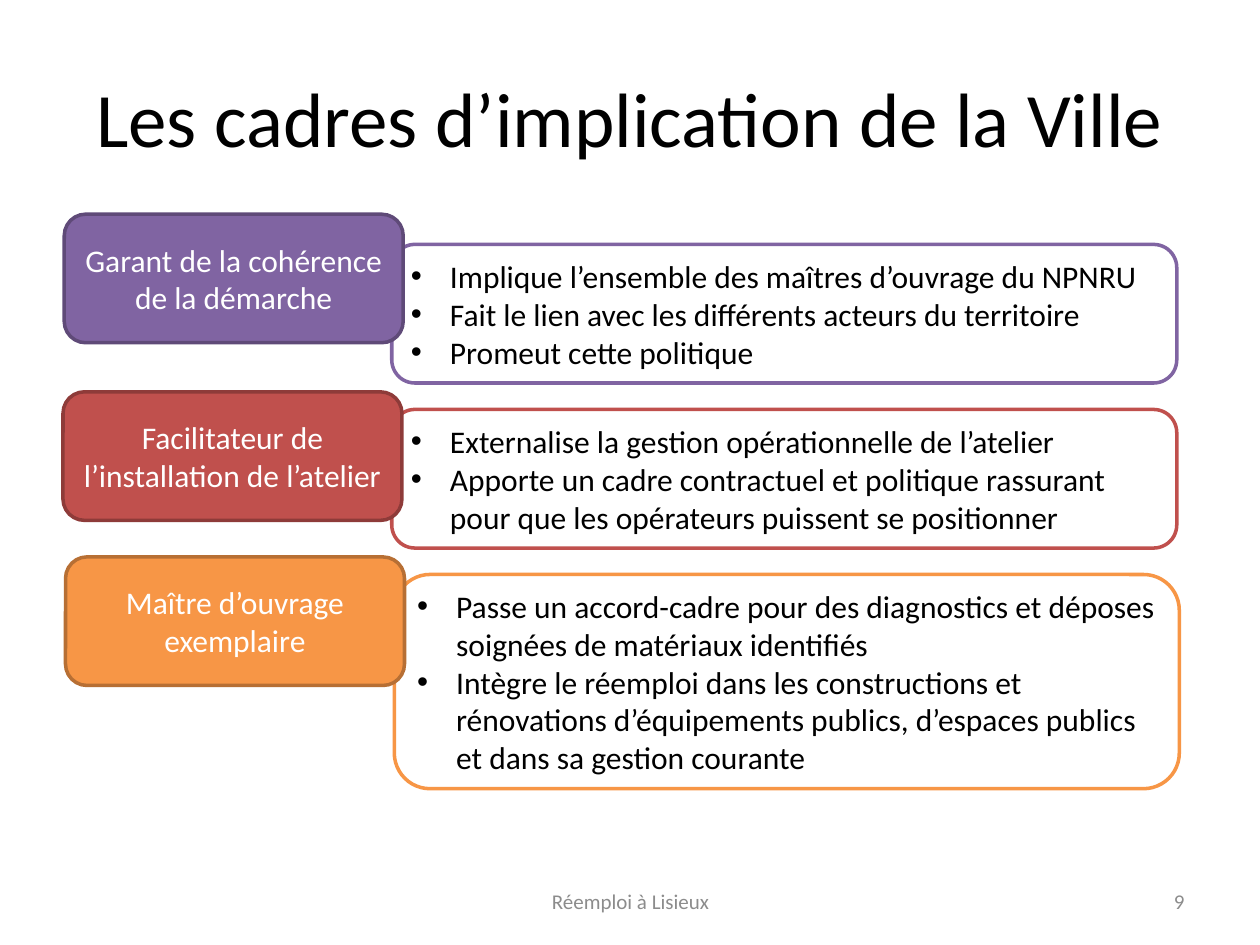
from dataclasses import dataclass

from lxml.etree import SubElement
from pptx import Presentation
from pptx.dml.color import RGBColor
from pptx.enum.shapes import MSO_SHAPE
from pptx.enum.text import MSO_ANCHOR, PP_ALIGN
from pptx.oxml.ns import qn
from pptx.util import Inches, Pt


@dataclass(frozen=True)
class Theme:
    """Fonts, sizes and colours of the slide."""

    font: str = "Calibri"
    title_size: int = 44
    body_size: int = 18
    footer_size: int = 12
    line_width: int = 2
    black: str = "000000"
    white: str = "FFFFFF"
    grey: str = "8C8C8C"
    purple: str = "8064A2"
    purple_edge: str = "5F4A78"
    red: str = "C0504D"
    red_edge: str = "8E3B39"
    orange: str = "F79646"
    orange_edge: str = "B76F34"


THEME = Theme()
LABEL_SIZE = (2.69, 1.02)
DETAIL_WIDTH = 6.23
BULLET_INDENT = 0.31

ROLES = [
    {
        "label": "Garant de la cohérence de la démarche",
        "label_at": (0.51, 1.7),
        "detail_at": (3.11, 1.94),
        "detail_height": 1.1,
        "colours": (THEME.purple, THEME.purple_edge),
        "details": [
            "Implique l’ensemble des maîtres d’ouvrage du NPNRU",
            "Fait le lien avec les différents acteurs du territoire",
            "Promeut cette politique",
        ],
    },
    {
        "label": "Facilitateur de l’installation de l’atelier",
        "label_at": (0.5, 3.11),
        "detail_at": (3.11, 3.25),
        "detail_height": 1.1,
        "colours": (THEME.red, THEME.red_edge),
        "details": [
            "Externalise la gestion opérationnelle de l’atelier",
            "Apporte un cadre contractuel et politique rassurant pour que "
            "les opérateurs puissent se positionner",
        ],
    },
    {
        "label": "Maître d’ouvrage exemplaire",
        "label_at": (0.52, 4.42),
        "detail_at": (3.13, 4.56),
        "detail_height": 1.7,
        "colours": (THEME.orange, THEME.orange_edge),
        "details": [
            "Passe un accord-cadre pour des diagnostics et déposes soignées "
            "de matériaux identifiés",
            "Intègre le réemploi dans les constructions et rénovations "
            "d’équipements publics, d’espaces publics et dans sa gestion courante",
        ],
    },
]


def apply_format(target, values):
    """Set every attribute in values on the target."""
    for name, value in values.items():
        setattr(target, name, value)


def add_bullet(paragraph):
    """Give a paragraph a hanging round bullet."""
    properties = paragraph._p.get_or_add_pPr()
    properties.set("marL", str(Inches(BULLET_INDENT)))
    properties.set("indent", str(-Inches(BULLET_INDENT)))
    SubElement(properties, qn("a:buFont")).set("typeface", "Arial")
    SubElement(properties, qn("a:buChar")).set("char", "•")


def write_text(shape, lines, size, colour, alignment, bulleted=False):
    """Write formatted paragraphs, centred vertically, into a shape."""
    frame = shape.text_frame
    apply_format(frame, {"word_wrap": True, "vertical_anchor": MSO_ANCHOR.MIDDLE})
    for index, line in enumerate(lines):
        paragraph = frame.add_paragraph() if index else frame.paragraphs[0]
        paragraph.alignment = alignment
        if bulleted:
            add_bullet(paragraph)
        run = paragraph.add_run()
        run.text = line
        apply_format(run.font, {"name": THEME.font, "size": Pt(size)})
        run.font.color.rgb = RGBColor.from_string(colour)


def add_title(slide, text):
    """Place and fill the title placeholder."""
    title = slide.shapes.title
    apply_format(title, {
        "left": Inches(0.5), "top": Inches(0.3),
        "width": Inches(9), "height": Inches(1.25),
    })
    write_text(title, [text], THEME.title_size, THEME.black, PP_ALIGN.CENTER)


def add_footer(slide, text, left, width, alignment):
    """Add a grey text box on the footer line."""
    box = slide.shapes.add_textbox(
        Inches(left), Inches(6.95), Inches(width), Inches(0.4))
    write_text(box, [text], THEME.footer_size, THEME.grey, alignment)


def add_card(slide, position, size, fill, line):
    """Add a flat rounded rectangle."""
    card = slide.shapes.add_shape(
        MSO_SHAPE.ROUNDED_RECTANGLE, *map(Inches, position + size))
    card.shadow.inherit = False
    card.fill.solid()
    card.fill.fore_color.rgb = RGBColor.from_string(fill)
    card.line.color.rgb = RGBColor.from_string(line)
    card.line.width = Pt(THEME.line_width)
    return card


def add_role(slide, role):
    """Add a detail card overlapped by its coloured label."""
    colour, edge = role["colours"]
    detail = add_card(slide, role["detail_at"],
                      (DETAIL_WIDTH, role["detail_height"]), THEME.white, colour)
    write_text(detail, role["details"], THEME.body_size, THEME.black,
               PP_ALIGN.LEFT, bulleted=True)
    label = add_card(slide, role["label_at"], LABEL_SIZE, colour, edge)
    write_text(label, [role["label"]], THEME.body_size, THEME.white,
               PP_ALIGN.CENTER)


def main():
    """Build and save the slide."""
    presentation = Presentation()
    apply_format(presentation, {
        "slide_width": Inches(10), "slide_height": Inches(7.5)})
    slide = presentation.slides.add_slide(presentation.slide_layouts[5])
    add_title(slide, "Les cadres d’implication de la Ville")
    add_footer(slide, "Réemploi à Lisieux", 3.42, 3.17, PP_ALIGN.CENTER)
    add_footer(slide, "9", 7.17, 2.33, PP_ALIGN.RIGHT)
    for role in ROLES:
        add_role(slide, role)
    presentation.save("out.pptx")


if __name__ == "__main__":
    main()
